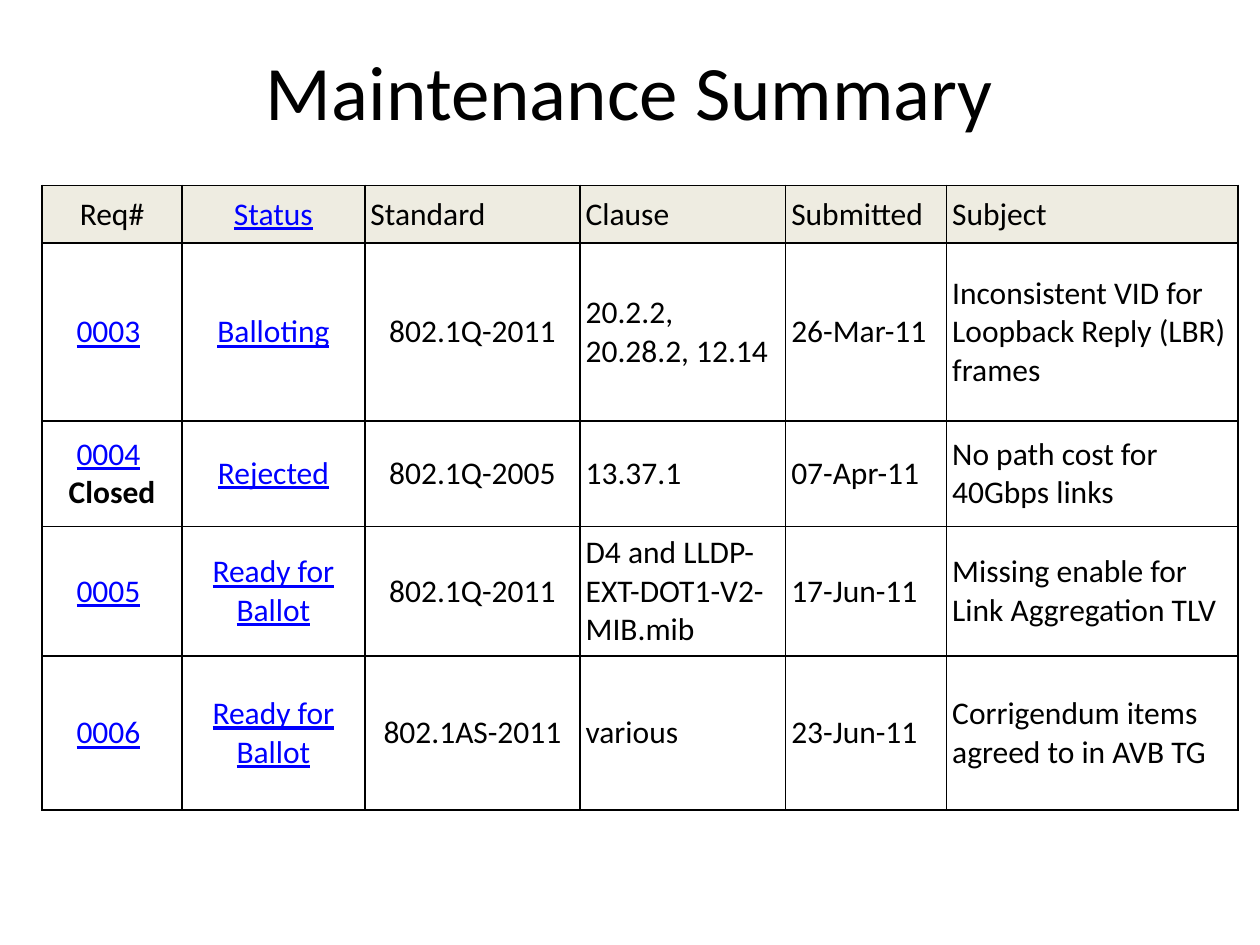
from collections import namedtuple
from dataclasses import dataclass

from lxml import etree
from pptx import Presentation
from pptx import util as u
from pptx.dml import color
from pptx.enum import text
from pptx.oxml import ns


@dataclass(frozen=True)
class Theme:
    font: str = "Calibri"
    title_size: int = 44
    body_size: int = 18
    ink: str = "000000"
    link: str = "0000FF"
    header_fill: str = "EEECE1"
    body_fill: str = "FFFFFF"
    border: str = "000000"
    border_width: int = 1
    cell_margin: float = 3.2


THEME = Theme()
Part = namedtuple("Part", "words link bold", defaults=(False, False))

COLUMN_WIDTHS = [80, 104.5, 123, 117.5, 92, 166.5]
ROW_HEIGHTS = [33, 101.5, 60.5, 74, 88]
HEADINGS = ["Req#", "Status", "Standard", "Clause", "Submitted", "Subject"]
REQUESTS = [
    ("0003", "", "Balloting", "802.1Q-2011", "20.2.2, 20.28.2, 12.14",
     "26-Mar-11", "Inconsistent VID for Loopback Reply (LBR) frames"),
    ("0004", "Closed", "Rejected", "802.1Q-2005", "13.37.1",
     "07-Apr-11", "No path cost for 40Gbps links"),
    ("0005", "", "Ready for\nBallot", "802.1Q-2011", "D4 and LLDP-EXT-DOT1-V2-MIB.mib",
     "17-Jun-11", "Missing enable for Link Aggregation TLV"),
    ("0006", "", "Ready for\nBallot", "802.1AS-2011", "various",
     "23-Jun-11", "Corrigendum items agreed to in AVB TG"),
]


def add_part(paragraph, part, size):
    for index, line in enumerate(part.words.split("\n")):
        if index:
            paragraph.add_line_break()
        if line:
            run = paragraph.add_run()
            run.text = line
            run.font.name = THEME.font
            run.font.size = u.Pt(size)
            run.font.bold = part.bold
            run.font.underline = part.link
            run.font.color.rgb = color.RGBColor.from_string(
                THEME.link if part.link else THEME.ink)


def add_title(slide, words):
    title = slide.shapes.title
    title.left, title.top = u.Pt(36), u.Pt(6)
    title.width, title.height = u.Pt(648), u.Pt(90)
    title.text_frame.vertical_anchor = text.MSO_ANCHOR.MIDDLE
    paragraph = title.text_frame.paragraphs[0]
    paragraph.alignment = text.PP_ALIGN.CENTER
    add_part(paragraph, Part(words), THEME.title_size)


def add_borders(cell):
    properties = cell._tc.get_or_add_tcPr()
    for side in ("a:lnL", "a:lnR", "a:lnT", "a:lnB"):
        line = etree.SubElement(properties, ns.qn(side), w=str(u.Pt(THEME.border_width)))
        fill = etree.SubElement(line, ns.qn("a:solidFill"))
        etree.SubElement(fill, ns.qn("a:srgbClr"), val=THEME.border)


def fill_cell(cell, parts, fill, centred):
    add_borders(cell)
    cell.fill.solid()
    cell.fill.fore_color.rgb = color.RGBColor.from_string(fill)
    margin = u.Pt(THEME.cell_margin)
    cell.margin_left = cell.margin_right = margin
    cell.margin_top = cell.margin_bottom = margin
    cell.vertical_anchor = text.MSO_ANCHOR.MIDDLE
    paragraph = cell.text_frame.paragraphs[0]
    paragraph.alignment = text.PP_ALIGN.CENTER if centred else text.PP_ALIGN.LEFT
    for part in parts:
        add_part(paragraph, part, THEME.body_size)


def request_cells(number, note, status, *details):
    number_parts = [Part(number, link=True), Part(" ")]
    if note:
        number_parts += [Part("\n"), Part(note, bold=True)]
    return [number_parts, [Part(status, link=True)]] + [[Part(words)] for words in details]


def add_summary_table(slide):
    table = slide.shapes.add_table(
        len(ROW_HEIGHTS), len(COLUMN_WIDTHS), u.Pt(24), u.Pt(106),
        u.Pt(sum(COLUMN_WIDTHS)), u.Pt(sum(ROW_HEIGHTS))).table
    for column, width in zip(table.columns, COLUMN_WIDTHS):
        column.width = u.Pt(width)
    for row, height in zip(table.rows, ROW_HEIGHTS):
        row.height = u.Pt(height)

    header = [[Part(words, link=words == "Status")] for words in HEADINGS]
    contents = [header] + [request_cells(*request) for request in REQUESTS]
    for row_index, row_parts in enumerate(contents):
        fill = THEME.body_fill if row_index else THEME.header_fill
        centred_columns = 3 if row_index else 2
        for column_index, parts in enumerate(row_parts):
            fill_cell(table.cell(row_index, column_index), parts, fill,
                      column_index < centred_columns)


def main():
    deck = Presentation()
    deck.slide_width, deck.slide_height = u.Pt(720), u.Pt(540)
    slide = deck.slides.add_slide(deck.slide_layouts[5])
    add_title(slide, "Maintenance Summary")
    add_summary_table(slide)
    deck.save("out.pptx")


if __name__ == "__main__":
    main()
